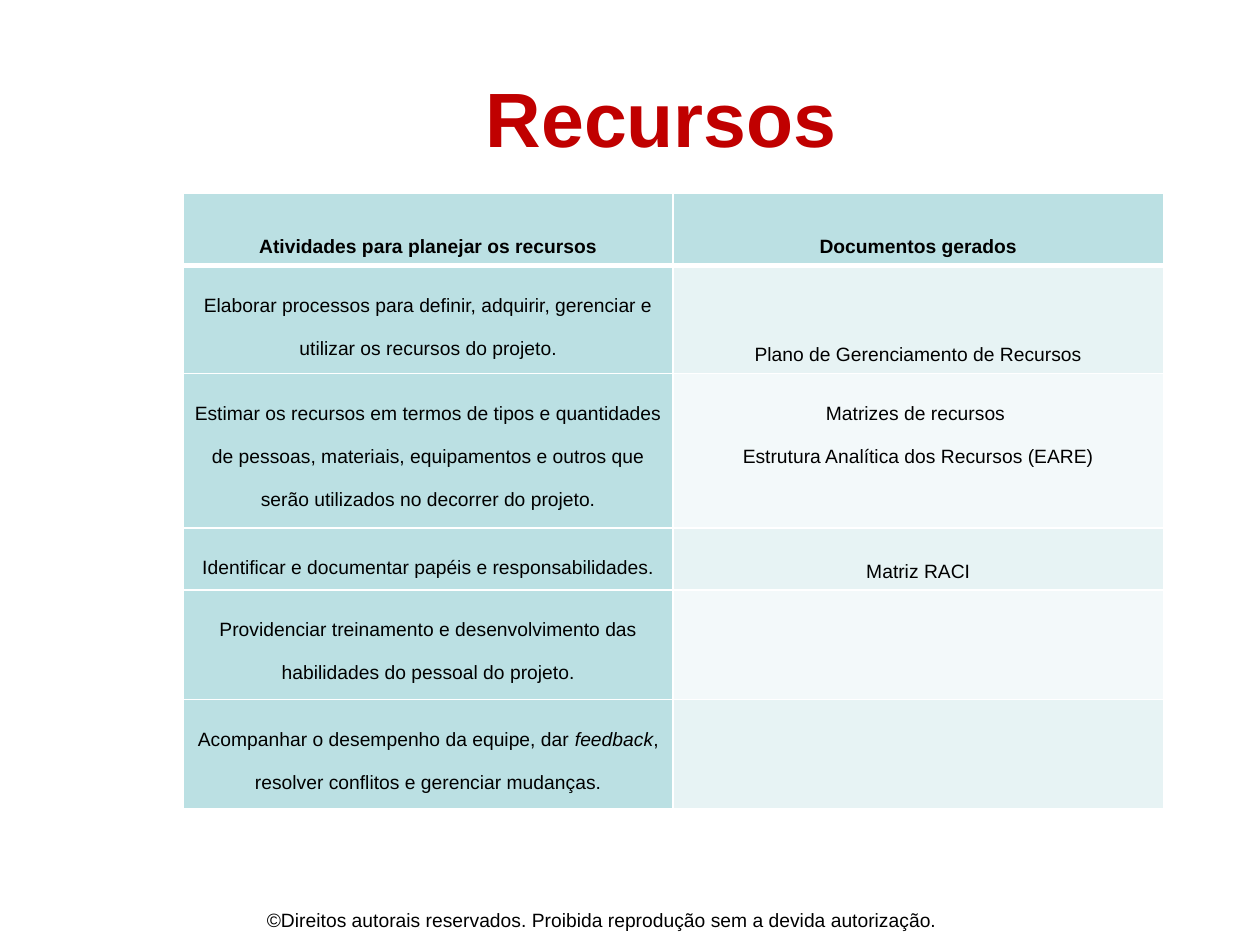
from dataclasses import dataclass

from lxml.etree import SubElement
from pptx import Presentation
from pptx.dml.color import RGBColor
from pptx.enum.text import MSO_ANCHOR, PP_ALIGN
from pptx.oxml.ns import qn
from pptx.util import Pt


@dataclass(frozen=True)
class Theme:
    font: str = "Arial"
    title_size: int = 44
    body_size: int = 11
    title: str = "C00000"
    text: str = "000000"
    border: str = "FFFFFF"
    strong: str = "BBE0E3"
    bands: tuple = ("E7F3F4", "F3F9FA")


theme = Theme()


def write(text_frame, text, size, color, bold=False, spacing=None):
    """Fill a frame with centred lines; text between asterisks is italic."""
    text_frame.word_wrap = True
    for index, line in enumerate(text.split("\n")):
        paragraph = text_frame.paragraphs[0] if index == 0 else text_frame.add_paragraph()
        paragraph.alignment = PP_ALIGN.CENTER
        if spacing:
            paragraph.line_spacing = spacing
        for part, piece in enumerate(line.split("*")):
            run = paragraph.add_run()
            run.text = piece
            run.font.name = theme.font
            run.font.size = Pt(size)
            run.font.bold = bold
            run.font.italic = part % 2 == 1
            run.font.color.rgb = RGBColor.from_string(color)


def set_border(cell, side, width):
    properties = cell._tc.get_or_add_tcPr()
    line = SubElement(properties, qn(f"a:{side}"), w=str(Pt(width)))
    fill = SubElement(line, qn("a:solidFill"))
    SubElement(fill, qn("a:srgbClr"), val=theme.border)


presentation = Presentation()
presentation.slide_width = Pt(720)
presentation.slide_height = Pt(540)
slide = presentation.slides.add_slide(presentation.slide_layouts[6])

# Title
title = slide.shapes.add_textbox(Pt(84), Pt(21.6), Pt(600), Pt(90))
title.text_frame.vertical_anchor = MSO_ANCHOR.MIDDLE
write(title.text_frame, "Recursos ", theme.title_size, theme.title, bold=True)

# Table of activities and documents
rows = [
    ("Atividades para planejar os recursos", "Documentos gerados"),
    ("Elaborar processos para definir, adquirir, gerenciar e utilizar os recursos do projeto.",
     "Plano de Gerenciamento de Recursos"),
    ("Estimar os recursos em termos de tipos e quantidades de pessoas, materiais, "
     "equipamentos e outros que serão utilizados no decorrer do projeto.",
     "Matrizes de recursos \nEstrutura Analítica dos Recursos (EARE)"),
    ("Identificar e documentar papéis e responsabilidades.", "Matriz RACI"),
    ("Providenciar treinamento e desenvolvimento das habilidades do pessoal do projeto.", ""),
    ("Acompanhar o desempenho da equipe, dar *feedback*, "
     "resolver conflitos e gerenciar mudanças.", ""),
]
column_widths = (279.5, 280.5)
row_heights = (41.5, 57, 81.5, 35.5, 62.5, 62.5)
table = slide.shapes.add_table(
    len(rows), len(column_widths), Pt(105), Pt(110.2),
    Pt(sum(column_widths)), Pt(sum(row_heights))).table
for column, width in zip(table.columns, column_widths):
    column.width = Pt(width)
for row, height in zip(table.rows, row_heights):
    row.height = Pt(height)

for row_index, texts in enumerate(rows):
    header = row_index == 0
    for column_index, text in enumerate(texts):
        cell = table.cell(row_index, column_index)
        cell.margin_left = cell.margin_right = Pt(4.5)
        cell.margin_top = cell.margin_bottom = Pt(4.5)
        one_line_document = column_index == 1 and "\n" not in text
        at_bottom = header or one_line_document
        cell.vertical_anchor = MSO_ANCHOR.BOTTOM if at_bottom else MSO_ANCHOR.TOP

        # Borders come before the fill in the cell properties
        for side in ("lnL", "lnR", "lnT", "lnB"):
            header_rule = (header and side == "lnB") or (row_index == 1 and side == "lnT")
            set_border(cell, side, 3 if header_rule else 1)
        strong = header or column_index == 0
        color = theme.strong if strong else theme.bands[(row_index - 1) % 2]
        cell.fill.solid()
        cell.fill.fore_color.rgb = RGBColor.from_string(color)
        if text:
            write(cell.text_frame, text, theme.body_size, theme.text, header, spacing=2)

# Copyright line
footer = slide.shapes.add_textbox(Pt(70.5), Pt(502.5), Pt(547), Pt(37.5))
footer.text_frame.margin_top = Pt(16.5)
write(footer.text_frame,
      "©Direitos autorais reservados. Proibida reprodução sem a devida autorização.",
      theme.body_size, theme.text)

presentation.save("out.pptx")
